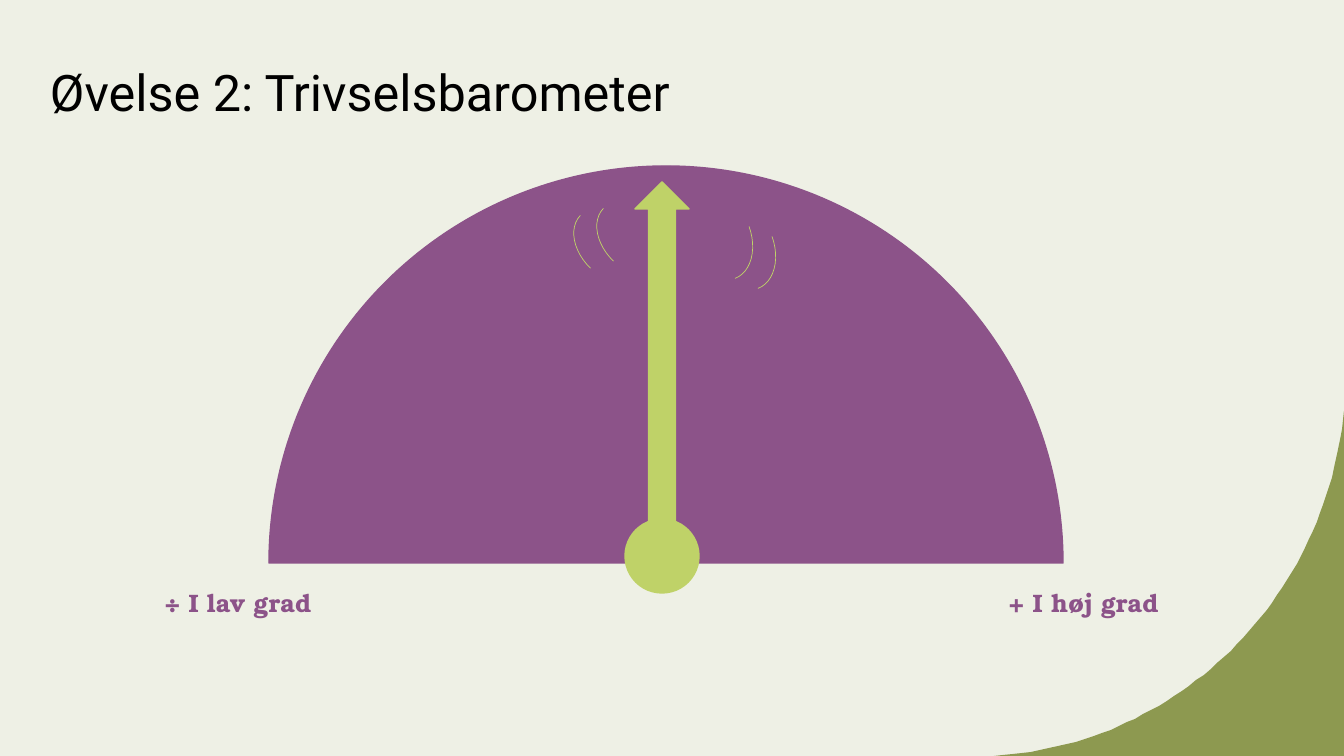
from lxml import etree
from pptx import Presentation
from pptx import util as u
from pptx.dml.color import RGBColor
from pptx.enum import shapes, text
from pptx.oxml.ns import qn

PX_PER_INCH = 100.8
CREAM, OLIVE, PURPLE, LIME, BLACK = "EEF0E5", "8D9950", "8C5389", "BFD268", "000000"
TEXTS = [
    ("Øvelse 2: Trivselsbarometer", (40, 18, 1218, 146), "Roboto", 36, False, BLACK),
    ("÷ I lav grad", (155, 582, 169, 40), "TeX Gyre Bonum", 18, True, PURPLE),
    ("+ I høj grad", (999, 582, 177, 40), "TeX Gyre Bonum", 18, True, PURPLE),
]
KIND = shapes.MSO_SHAPE
DIAL = (269, 166, 794, 794)
NEEDLE = (635, 182, 54, 342)
HUB = (625, 519, 74, 74)
ARC_SIZE = (62, 88)
SWING_ARCS = [(712, 203, 160), (604, 195, 314), (581, 202, 314), (689, 193, 160)]
CORNER_CURVE = [(975, 756), (1166, 756), (1325, 607), (1344, 411)]
CURVE_STEPS = 60


def px(length):
    return u.Inches(length / PX_PER_INCH)


def color(value):
    return RGBColor.from_string(value)


def curve_point(t):
    weights = ((1 - t) ** 3, 3 * t * (1 - t) ** 2, 3 * t * t * (1 - t), t ** 3)
    return tuple(sum(w * point[axis] for w, point in zip(weights, CORNER_CURVE))
                 for axis in (0, 1))


def add_shape(slide, kind, box, line, width=1, fill=None):
    shape = slide.shapes.add_shape(kind, *map(px, box))
    shape.shadow.inherit = False
    if fill:
        shape.fill.solid()
        shape.fill.fore_color.rgb = color(fill)
    else:
        shape.fill.background()
    shape.line.color.rgb = color(line)
    shape.line.width = u.Pt(width)
    return shape


def add_corner(slide):
    points = [curve_point(step / CURVE_STEPS) for step in range(CURVE_STEPS + 1)]
    builder = slide.shapes.build_freeform(*points[0], scale=px(1000) / 1000)
    builder.add_line_segments(points[1:] + [(1344, 756)], close=True)
    corner = builder.convert_to_shape()
    corner.shadow.inherit = False
    corner.fill.solid()
    corner.fill.fore_color.rgb = color(OLIVE)
    corner.line.fill.background()


def add_text(slide, words, box, font, size, bold, ink):
    frame = slide.shapes.add_textbox(*map(px, box)).text_frame
    frame.word_wrap = True
    frame.vertical_anchor = text.MSO_ANCHOR.MIDDLE
    paragraph = frame.paragraphs[0]
    paragraph.text = words
    paragraph.font.name = font
    paragraph.font.size = u.Pt(size)
    paragraph.font.bold = bold
    paragraph.font.color.rgb = color(ink)


def main():
    presentation = Presentation()
    presentation.slide_width, presentation.slide_height = px(1344), px(756)
    slide = presentation.slides.add_slide(presentation.slide_layouts[6])
    slide.background.fill.solid()
    slide.background.fill.fore_color.rgb = color(CREAM)

    add_corner(slide)
    dial = add_shape(slide, KIND.PIE, DIAL, PURPLE, fill=PURPLE)
    dial.adjustments[0] = 0
    dial.adjustments[1] = 108
    dial.rotation = 180
    for item in TEXTS:
        add_text(slide, *item)
    add_shape(slide, KIND.UP_ARROW, NEEDLE, LIME, fill=LIME)
    add_shape(slide, KIND.OVAL, HUB, LIME, fill=LIME)
    for left, top, angle in SWING_ARCS:
        arc = add_shape(slide, KIND.ARC, (left, top, *ARC_SIZE), LIME, width=0.5)
        arc.rotation = angle
        arc.element.spPr.find(qn("a:xfrm")).set("flipH", "1")

    presentation.save("out.pptx")


if __name__ == "__main__":
    main()
